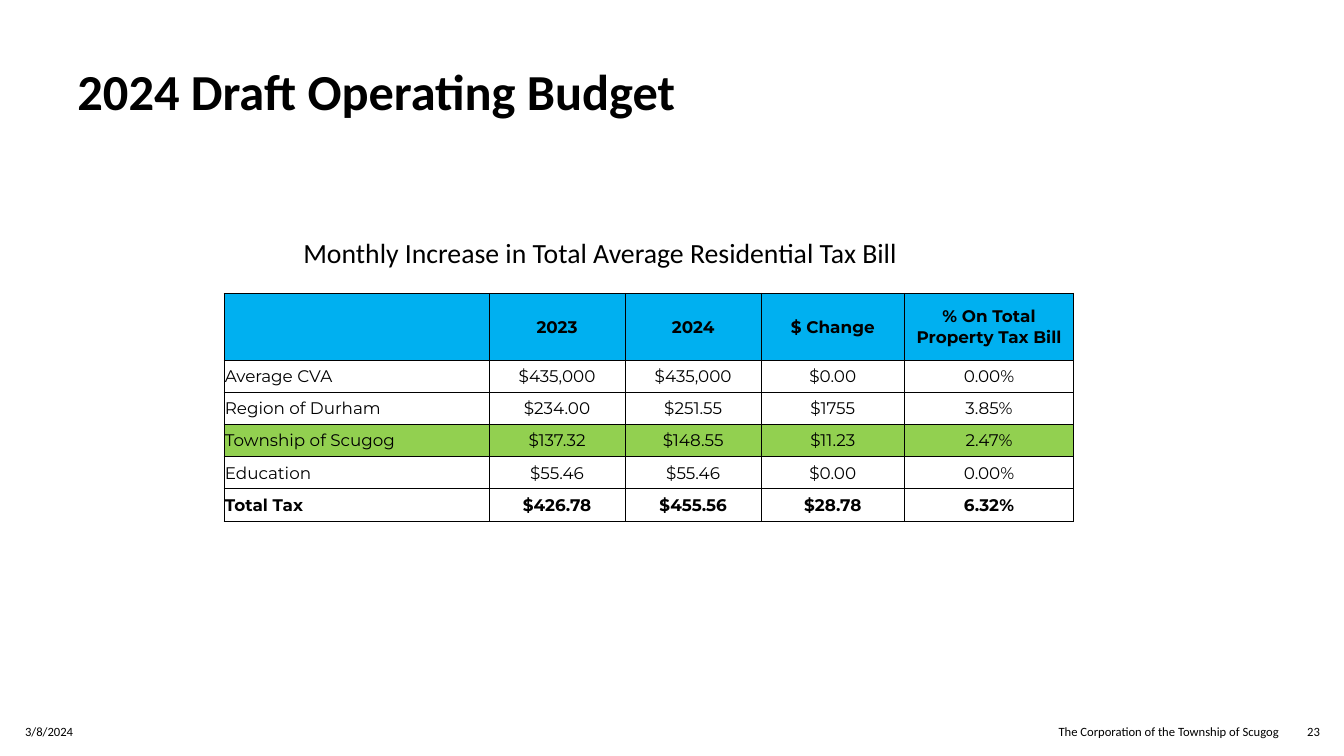
from lxml import etree
from pptx import Presentation
from pptx.dml.color import RGBColor
from pptx.enum.text import MSO_ANCHOR, PP_ALIGN
from pptx.oxml.ns import qn
from pptx.util import Inches, Pt

LEFT, CENTER, RIGHT = PP_ALIGN.LEFT, PP_ALIGN.CENTER, PP_ALIGN.RIGHT
TOP, MIDDLE = MSO_ANCHOR.TOP, MSO_ANCHOR.MIDDLE
BLACK, BLUE, GREEN = "000000", "00B0F0", "92D050"


def color(hex_code):
    return RGBColor.from_string(hex_code)


def write(frame, text, font, size, bold, align):
    """Fill a text frame with one black paragraph."""
    frame.word_wrap = True
    para = frame.paragraphs[0]
    para.text = text
    para.alignment = align
    para.font.name = font
    para.font.size = Pt(size)
    para.font.bold = bold
    para.font.color.rgb = color(BLACK)


deck = Presentation()
deck.slide_width, deck.slide_height = Inches(13.33), Inches(7.5)
page = deck.slides.add_slide(deck.slide_layouts[6])

# Heading, table caption and footer
FOOTER_TOP, FOOTER_HEIGHT = 7.06, 0.4
texts = [
    ("2024 Draft Operating Budget", 0.67, 0.6, 11.65, 0.65, 36, True, LEFT, TOP),
    ("Monthly Increase in Total Average Residential Tax Bill",
     2.91, 2.34, 7.5, 0.4, 19.8, False, LEFT, TOP),
    ("3/8/2024", 0.15, FOOTER_TOP, 3.82, FOOTER_HEIGHT, 9, False, LEFT, MIDDLE),
    ("The Corporation of the Township of Scugog",
     9.71, FOOTER_TOP, 3.07, FOOTER_HEIGHT, 9, False, RIGHT, MIDDLE),
    ("23", 12.72, FOOTER_TOP, 0.47, FOOTER_HEIGHT, 9, False, RIGHT, MIDDLE),
]
for text, left, top, width, height, size, bold, align, anchor in texts:
    box = page.shapes.add_textbox(Inches(left), Inches(top), Inches(width), Inches(height))
    frame = box.text_frame
    frame.margin_top = frame.margin_bottom = 0
    frame.vertical_anchor = anchor
    write(frame, text, "Calibri", size, bold, align)

# Tax bill table
rows = [
    ("", "2023", "2024", "$ Change", "% On Total Property Tax Bill"),
    ("Average CVA", "$435,000", "$435,000", "$0.00", "0.00%"),
    ("Region of Durham", "$234.00", "$251.55", "$1755", "3.85%"),
    ("Township of Scugog", "$137.32", "$148.55", "$11.23", "2.47%"),
    ("Education", "$55.46", "$55.46", "$0.00", "0.00%"),
    ("Total Tax", "$426.78", "$455.56", "$28.78", "6.32%"),
]
column_widths = [2.63, 1.35, 1.35, 1.42, 1.68]
row_heights = [0.66] + [0.32] * (len(rows) - 1)
row_fills = {0: BLUE, 3: GREEN}
bold_rows = (0, len(rows) - 1)

table = page.shapes.add_table(
    len(rows), len(column_widths), Inches(2.22), Inches(2.91),
    Inches(sum(column_widths)), Inches(sum(row_heights))).table
table.first_row = table.horz_banding = False
for column, width in zip(table.columns, column_widths):
    column.width = Inches(width)

for r, values in enumerate(rows):
    table.rows[r].height = Inches(row_heights[r])
    for c, value in enumerate(values):
        cell = table.cell(r, c)
        cell.vertical_anchor = MIDDLE
        cell.margin_left = cell.margin_right = cell.margin_top = Inches(0.01)
        cell.margin_bottom = 0
        write(cell.text_frame, value, "Montserrat", 12, r in bold_rows,
              CENTER if c else LEFT)
        properties = cell._tc.get_or_add_tcPr()
        for side in ("a:lnL", "a:lnR", "a:lnT", "a:lnB"):
            line = etree.SubElement(properties, qn(side), w=str(Pt(0.5)))
            paint = etree.SubElement(line, qn("a:solidFill"))
            etree.SubElement(paint, qn("a:srgbClr"), val=BLACK)
        if r in row_fills:
            cell.fill.solid()
            cell.fill.fore_color.rgb = color(row_fills[r])
        else:
            cell.fill.background()

deck.save("out.pptx")
